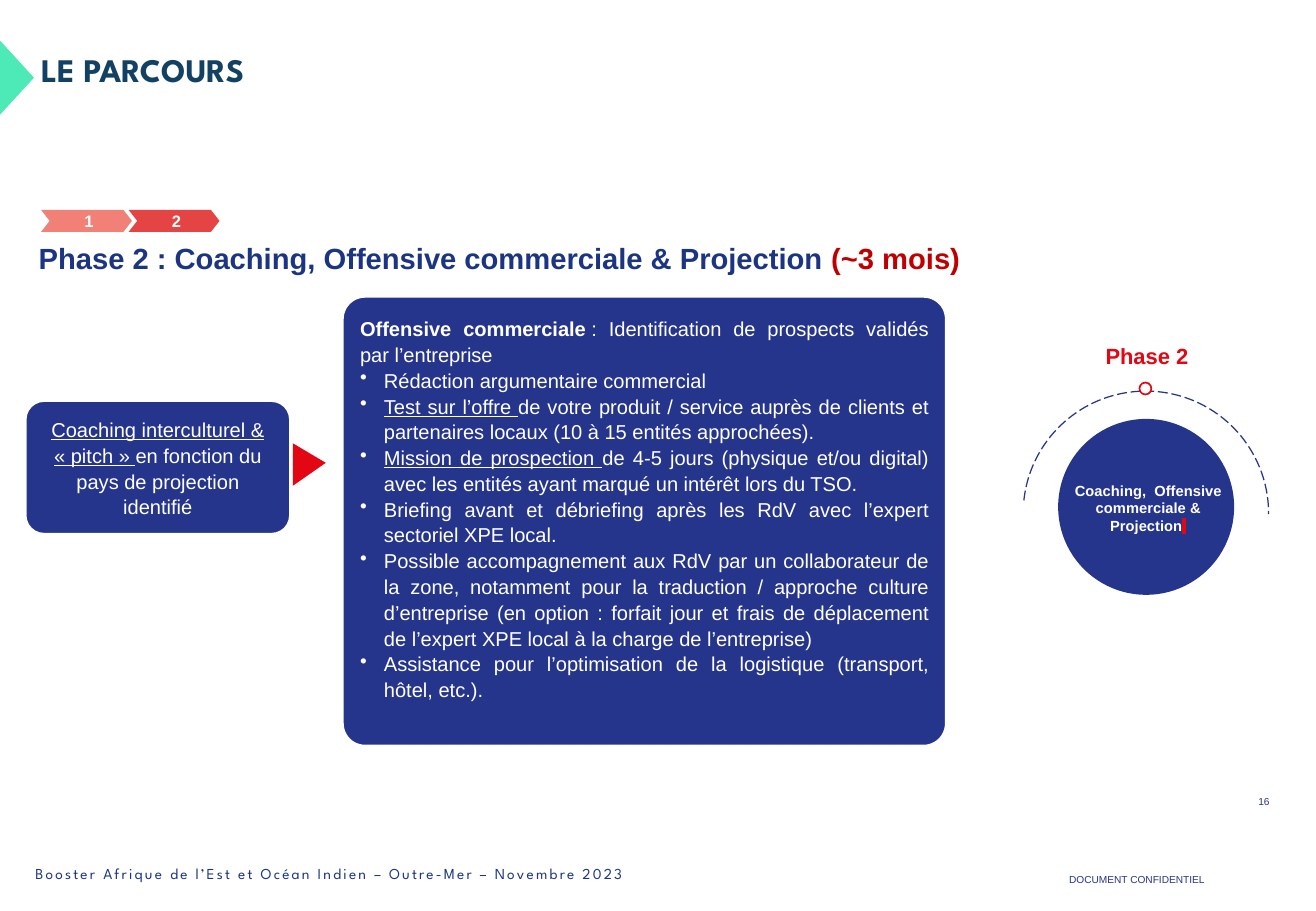
from dataclasses import dataclass

from lxml import etree
from pptx import Presentation
from pptx import util as u
from pptx.dml.color import RGBColor
from pptx.enum import dml, shapes, text
from pptx.oxml.ns import qn

NAVY = RGBColor(0x26, 0x35, 0x8C)
HEADING_BLUE = RGBColor(0x1C, 0x35, 0x82)
TITLE_BLUE = RGBColor(0x13, 0x41, 0x63)
MINT = RGBColor(0x4D, 0xEA, 0xB7)
SALMON = RGBColor(0xF1, 0x80, 0x77)
CORAL = RGBColor(0xE4, 0x44, 0x44)
RED = RGBColor(0xE3, 0x06, 0x13)
DARK_RED = RGBColor(0xC0, 0x00, 0x00)
WHITE = RGBColor(0xFF, 0xFF, 0xFF)

SHAPE = shapes.MSO_SHAPE
ALIGN = text.PP_ALIGN
MIDDLE = text.MSO_ANCHOR.MIDDLE
UNDERLINE = {"underline": True}

COACHING = [[("Coaching interculturel & «\u00a0pitch\u00a0» ", UNDERLINE),
             ("en fonction du pays de projection identifié", {})]]
OFFENSIVE = [
    [("Offensive commerciale\u00a0", {"bold": True}),
     (": Identification de prospects validés par l’entreprise", {})],
    [("Rédaction argumentaire commercial", {})],
    [("Test sur l’offre ", UNDERLINE),
     ("de votre produit / service auprès de clients et partenaires locaux "
      "(10 à 15 entités approchées).", {})],
    [("Mission de prospection ", UNDERLINE),
     ("de 4-5 jours (physique et/ou digital) avec les entités ayant marqué "
      "un intérêt lors du TSO.", {})],
    [("Briefing avant et débriefing après les RdV avec l’expert sectoriel XPE local.", {})],
    [("Possible accompagnement aux RdV par un collaborateur de la zone, notamment pour "
      "la traduction / approche culture d’entreprise (en option : forfait jour et frais "
      "de déplacement de l’expert XPE local à la charge de l’entreprise)", {})],
    [("Assistance pour l’optimisation de la logistique (transport, hôtel, etc.).", {})],
]


@dataclass
class Box:
    """A rectangle in centimetres."""
    left: float
    top: float
    width: float
    height: float

    def inside(self, left, top, width, height):
        return Box(self.left + left, self.top + top, width, height)

    def lengths(self):
        return [u.Cm(value) for value in (self.left, self.top, self.width, self.height)]


def set_all(target, values):
    for name, value in values.items():
        setattr(target, name, value)


def add_bullet(paragraph):
    properties = paragraph._p.get_or_add_pPr()
    properties.set("marL", str(u.Cm(0.5)))
    properties.set("indent", str(u.Cm(-0.5)))
    etree.SubElement(properties, qn("a:buChar")).set("char", "•")


def write(frame, paragraphs, size, color, align=ALIGN.LEFT, anchor=text.MSO_ANCHOR.TOP,
          insets=(0, 0, 0, 0), line_spacing=1.0, font="Arial", bold=False, bulleted_from=None):
    """Fill a text frame; each paragraph is a list of (text, font overrides)."""
    left, top, right, bottom = (u.Cm(inset) for inset in insets)
    set_all(frame, {"word_wrap": True, "auto_size": text.MSO_AUTO_SIZE.NONE,
                    "vertical_anchor": anchor, "margin_left": left, "margin_top": top,
                    "margin_right": right, "margin_bottom": bottom})
    for index, pieces in enumerate(paragraphs):
        paragraph = frame.add_paragraph() if index else frame.paragraphs[0]
        if bulleted_from is not None and index >= bulleted_from:
            add_bullet(paragraph)
        set_all(paragraph, {"alignment": align, "line_spacing": line_spacing,
                            "space_before": u.Pt(0), "space_after": u.Pt(0)})
        for words, overrides in pieces:
            run = paragraph.add_run()
            run.text = words
            overrides = dict(overrides)
            run.font.color.rgb = overrides.pop("color", color)
            set_all(run.font, {"name": font, "size": u.Pt(size), "bold": bold, **overrides})


def add_text(slide, box, words, size, color, **options):
    frame = slide.shapes.add_textbox(*box.lengths()).text_frame
    paragraphs = [[(words, {})]] if isinstance(words, str) else words
    write(frame, paragraphs, size, color, **options)
    return frame


def add_figure(slide, kind, box, fill=None, line=None, weight=1.0, adjustments=()):
    shape = slide.shapes.add_shape(kind, *box.lengths())
    shape.shadow.inherit = False
    for index, value in enumerate(adjustments):
        shape.adjustments[index] = value
    if fill is None:
        shape.fill.background()
    else:
        shape.fill.solid()
        shape.fill.fore_color.rgb = fill
    if line is None:
        shape.line.fill.background()
    else:
        shape.line.color.rgb = line
        shape.line.width = u.Pt(weight)
    return shape


def add_pointer(slide, box, fill, apex=0.5):
    """Triangle pointing right that covers the box once turned."""
    shift = (box.width - box.height) / 2
    turned = box.inside(shift, -shift, box.height, box.width)
    add_figure(slide, SHAPE.ISOSCELES_TRIANGLE, turned, fill, adjustments=[apex]).rotation = 90


def add_header(slide, box):
    add_pointer(slide, box.inside(0, 0, 0.71, box.height), MINT)
    title = slide.shapes.title
    place = box.inside(0.86, 0.27, box.width - 0.86, 0.76).lengths()
    set_all(title, dict(zip(("left", "top", "width", "height"), place)))
    write(title.text_frame, [[("LE PARCOURS", {})]], 19.5, TITLE_BLUE,
          line_spacing=0.9, font="League Spartan", bold=True)


def add_steps(slide, box):
    step = 1.83
    for index, fill in enumerate((SALMON, CORAL)):
        chevron = add_figure(slide, SHAPE.CHEVRON, box.inside(index * step, 0, 1.9, box.height),
                             fill, adjustments=[0.39])
        write(chevron.text_frame, [[(str(index + 1), {})]], 9.8, WHITE, align=ALIGN.CENTER,
              anchor=MIDDLE, insets=(0.33, 0.13, 0.23, 0.13), bold=True)


def add_card(slide, box, paragraphs, corner, align, bottom=0.23, bulleted_from=None):
    card = add_figure(slide, SHAPE.ROUNDED_RECTANGLE, box, NAVY, WHITE, 1.5, [corner])
    write(card.text_frame, paragraphs, 11.9, WHITE, align=align, anchor=MIDDLE,
          insets=(0.23, 0.23, 0.23, bottom), line_spacing=1.07, bulleted_from=bulleted_from)


def add_content(slide, box):
    add_card(slide, box.inside(0, 2.18, 5.54, 2.79), COACHING, 0.14, ALIGN.CENTER)
    add_pointer(slide, box.inside(5.59, 3.07, 0.69, 0.89), RED, 0.46)
    add_card(slide, box.inside(6.63, 0, 12.62, box.height), OFFENSIVE, 0.05, ALIGN.JUSTIFY,
             bottom=0.77, bulleted_from=1)


def add_phase_badge(slide, box):
    add_figure(slide, SHAPE.OVAL, box.inside(0.73, 1.75, 3.68, 3.68), NAVY)
    degree = 0.6
    arc = add_figure(slide, SHAPE.ARC, box.inside(0, 1.17, box.width, 5.11), line=NAVY,
                     weight=0.75, adjustments=[186 * degree, 0.4 * degree])
    arc.line.dash_style = dml.MSO_LINE.LONG_DASH
    add_text(slide, box.inside(1.57, 0, 2.03, 0.84), "Phase 2", 13, RED,
             align=ALIGN.CENTER, anchor=MIDDLE, bold=True)
    name = [[("Coaching,  Offensive commerciale & Projection", {}), (" ", {})]]
    frame = add_text(slide, box.inside(0.81, 3.05, 3.61, 1.12), name, 8.7, WHITE,
                     align=ALIGN.CENTER, anchor=MIDDLE, bold=True)
    properties = frame.paragraphs[0].runs[-1].font._element
    highlight = etree.Element(qn("a:highlight"))
    etree.SubElement(highlight, qn("a:srgbClr")).set("val", str(RED))
    properties.find(qn("a:latin")).addprevious(highlight)
    add_figure(slide, SHAPE.OVAL, box.inside(2.43, 0.99, 0.25, 0.25), WHITE, RED)


def add_footer(slide, box):
    frame = add_text(slide, box.inside(0, 1.44, 20, 0.51),
                     "Booster Afrique de l’Est et Océan Indien – Outre-Mer – Novembre 2023",
                     9, HEADING_BLUE, font="League Spartan")
    frame.paragraphs[0].runs[0].font._element.set("spc", "130")
    add_text(slide, box.inside(21.61, 1.62, 2.97, 0.25), "DOCUMENT CONFIDENTIEL", 6, NAVY)
    add_text(slide, box.inside(box.width - 0.76, 0, 0.76, 0.25), "16", 6, NAVY,
             align=ALIGN.RIGHT)


def main():
    presentation = Presentation()
    presentation.slide_width = u.Cm(27.51)
    presentation.slide_height = u.Cm(19.05)
    slide = presentation.slides.add_slide(presentation.slide_layouts[5])
    add_header(slide, Box(0, 0.85, 20.95, 1.55))
    add_steps(slide, Box(0.86, 4.39, 3.73, 0.46))
    heading = [[("Phase 2 : Coaching, Offensive commerciale & Projection ", {}),
                ("(~3 mois)", {"color": DARK_RED})]]
    add_text(slide, Box(0.81, 5.03, 25.63, 0.74), heading, 17.3, HEADING_BLUE, bold=True)
    add_content(slide, Box(0.53, 6.2, 19.25, 9.4))
    add_phase_badge(slide, Box(21.39, 7.01, 5.13, 6.28))
    add_footer(slide, Box(0.74, 16.64, 25.8, 1.95))
    presentation.save("out.pptx")


if __name__ == "__main__":
    main()
